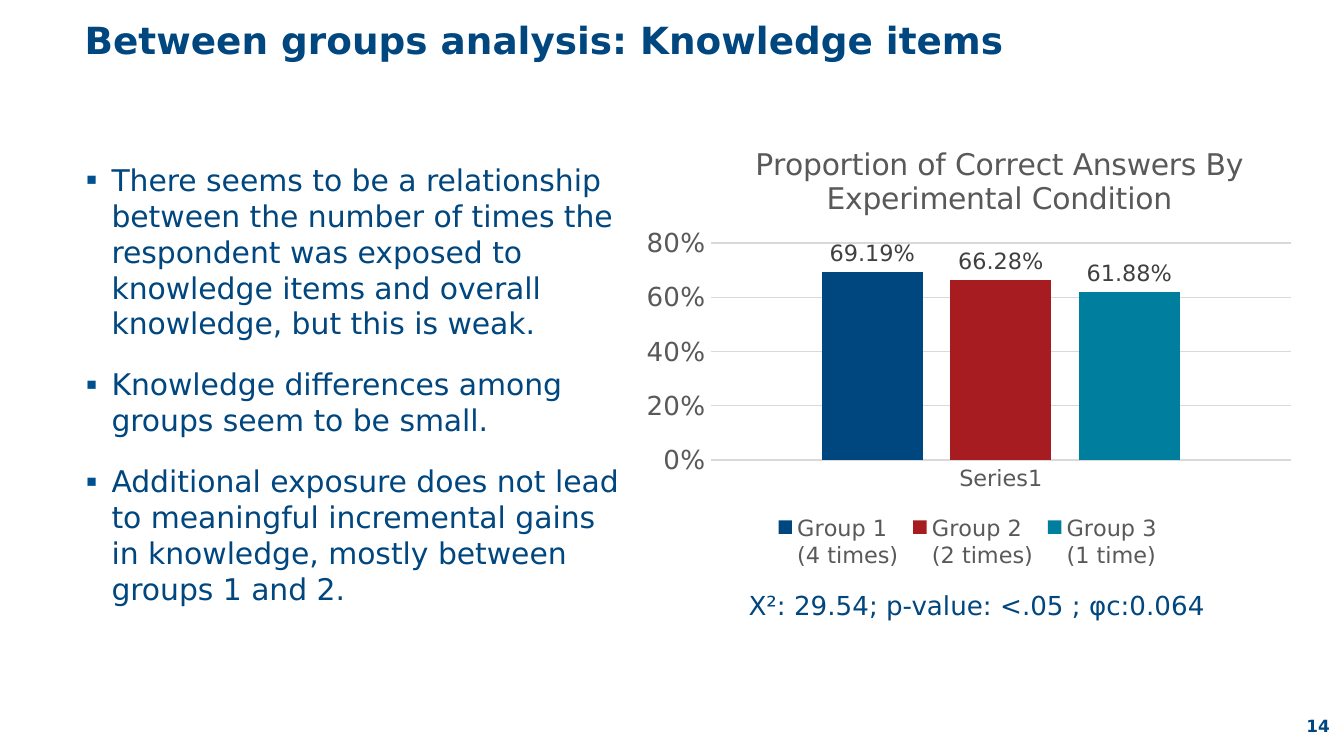
from dataclasses import dataclass

from lxml.etree import SubElement
from pptx import Presentation
from pptx.chart.data import CategoryChartData
from pptx.dml.color import RGBColor
from pptx.enum.chart import XL_CHART_TYPE, XL_LABEL_POSITION, XL_LEGEND_POSITION, XL_TICK_MARK
from pptx.enum.text import MSO_ANCHOR, MSO_AUTO_SIZE, PP_ALIGN
from pptx.oxml.ns import qn
from pptx.util import Inches, Pt

# Content
TITLE = "Between groups analysis: Knowledge items"
FINDINGS = [
    "There seems to be a relationship between the number of times the respondent "
    "was exposed to knowledge items and overall knowledge, but this is weak.",
    "Knowledge differences among groups seem to be small.",
    "Additional exposure does not lead to meaningful incremental gains in knowledge, "
    "mostly between groups 1 and 2.",
]
STATISTICS = "Χ²: 29.54; p-value: <.05 ; φc:0.064"
PAGE = "14"
CHART_TITLE = "Proportion of Correct Answers By Experimental Condition"
CATEGORY = "Series1"
GROUPS = [
    ("Group 1\n(4 times)", 0.6919, "00467F"),
    ("Group 2\n(2 times)", 0.6628, "A71C20"),
    ("Group 3\n(1 time)", 0.6188, "007E9D"),
]


@dataclass(frozen=True)
class Theme:
    font: str = "DejaVu Sans"
    navy: str = "00467F"
    bullet: str = "004F90"
    grey: str = "595959"
    label: str = "404040"
    rule: str = "D9D9D9"
    title: int = 20
    body: int = 16
    note: int = 14
    small: int = 12
    page: int = 9


THEME = Theme()
WIDTH = Inches(10)
HEIGHT = WIDTH * 9 // 16

# Left, top, width and height as percentages of the slide
AREAS = {
    "title": (5.3, 0, 91.7, 11.2),
    "findings": (4.7, 20.5, 42.5, 63.5),
    "statistics": (54.1, 76.3, 39.8, 7.7),
    "chart": (47, 15.5, 50, 60.5),
    "page": (97.2, 93.4, 3.5, 5.3),
}

# Positions as percentages of the chart
PLOT = {"x": 11.8, "y": 27.5, "w": 86.3, "h": 47.5}
HEADING = {"x": 17.6, "y": 5}


def area(name):
    sides = (WIDTH, HEIGHT, WIDTH, HEIGHT)
    return [int(side * share / 100) for side, share in zip(sides, AREAS[name])]


def style(font, size, color, bold=False):
    font.name, font.size, font.bold = THEME.font, Pt(size), bold
    font.color.rgb = RGBColor.from_string(color)


def rule(line):
    line.color.rgb = RGBColor.from_string(THEME.rule)
    line.width = Pt(0.75)


def write(shape, name, lines, size, bold=False, anchor=MSO_ANCHOR.TOP):
    shape.left, shape.top, shape.width, shape.height = area(name)
    frame = shape.text_frame
    frame.text = "\n".join(lines)
    frame.word_wrap = True
    frame.auto_size = MSO_AUTO_SIZE.NONE
    frame.vertical_anchor = anchor
    for paragraph in frame.paragraphs:
        paragraph.alignment = PP_ALIGN.LEFT
        for run in paragraph.runs:
            style(run.font, size, THEME.navy, bold)
    return frame


def space(frame, margin, indent, bullet=None):
    for number, paragraph in enumerate(frame.paragraphs):
        properties = paragraph._p.get_or_add_pPr()
        properties.set("marL", str(Inches(margin)))
        properties.set("indent", str(Inches(indent)))
        if bullet:
            color = SubElement(properties, qn("a:buClr"))
            SubElement(color, qn("a:srgbClr"), val=THEME.bullet)
            SubElement(properties, qn("a:buSzPct"), val="110000")
            SubElement(properties, qn("a:buChar"), char=bullet)
        else:
            SubElement(properties, qn("a:buNone"))
        paragraph.space_before = Pt(7.5 if number else 0)
        paragraph.space_after = Pt(6)


def place(part, shares, position, inner=False):
    """Give a chart part a fixed layout, as its child at the given position."""
    for old in part.findall(qn("c:layout")):
        part.remove(old)
    layout = part.makeelement(qn("c:layout"))
    part.insert(position, layout)
    manual = SubElement(layout, qn("c:manualLayout"))
    if inner:
        SubElement(manual, qn("c:layoutTarget"), val="inner")
    for mode in ("xMode", "yMode"):
        SubElement(manual, qn(f"c:{mode}"), val="edge")
    for key, share in shares.items():
        SubElement(manual, qn(f"c:{key}"), val=str(share / 100))


def add_results(slide):
    data = CategoryChartData(number_format="0.00%")
    data.categories = [CATEGORY]
    for name, share, _ in GROUPS:
        data.add_series(name, [share])
    chart = slide.shapes.add_chart(XL_CHART_TYPE.COLUMN_CLUSTERED, *area("chart"), data).chart
    style(chart.font, THEME.small, THEME.grey)

    # Heading and legend
    heading = chart.chart_title.text_frame
    heading.text = CHART_TITLE
    style(heading.paragraphs[0].runs[0].font, THEME.body, THEME.grey)
    chart.chart_title.include_in_layout = False
    chart.has_legend = True
    chart.legend.position = XL_LEGEND_POSITION.BOTTOM
    chart.legend.include_in_layout = False
    style(chart.legend.font, THEME.small, THEME.grey)

    # Axes
    for axis, size in ((chart.category_axis, THEME.small), (chart.value_axis, THEME.note)):
        axis.major_tick_mark = axis.minor_tick_mark = XL_TICK_MARK.NONE
        style(axis.tick_labels.font, size, THEME.grey)
    rule(chart.category_axis.format.line)
    values = chart.value_axis
    values.minimum_scale, values.maximum_scale, values.major_unit = 0, 0.8, 0.2
    values.tick_labels.number_format = "0%"
    values.tick_labels.number_format_is_linked = False
    values.format.line.fill.background()
    rule(values.major_gridlines.format.line)

    # Columns
    plot = chart.plots[0]
    plot.gap_width, plot.overlap, plot.vary_by_categories = 219, -27, False
    for series, (_, _, color) in zip(plot.series, GROUPS):
        series.format.fill.solid()
        series.format.fill.fore_color.rgb = RGBColor.from_string(color)
        labels = series.data_labels
        labels.show_value = True
        labels.number_format, labels.number_format_is_linked = "0.00%", False
        labels.position = XL_LABEL_POSITION.OUTSIDE_END
        style(labels.font, THEME.small, THEME.label)

    # Fixed positions
    root = chart._chartSpace.chart
    place(root.plotArea, PLOT, 0, inner=True)
    place(root.find(qn("c:title")), HEADING, 1)


def main():
    deck = Presentation()
    deck.slide_width, deck.slide_height = WIDTH, HEIGHT
    slide = deck.slides.add_slide(deck.slide_layouts[3])
    title, findings, statistics = slide.placeholders

    # Text
    heading = write(title, "title", [TITLE], THEME.title, True, MSO_ANCHOR.MIDDLE)
    heading.paragraphs[0].line_spacing = 0.9
    space(write(findings, "findings", FINDINGS, THEME.body), 0.26, -0.19, "▪")
    result = write(statistics, "statistics", [STATISTICS], THEME.note)
    result.margin_top = Inches(0.09)
    space(result, 0.06, 0)

    add_results(slide)

    # Page number
    page = slide.shapes.add_textbox(*area("page"))
    write(page, "page", [PAGE], THEME.page, True, MSO_ANCHOR.MIDDLE).margin_left = 0

    deck.save("out.pptx")


if __name__ == "__main__":
    main()
